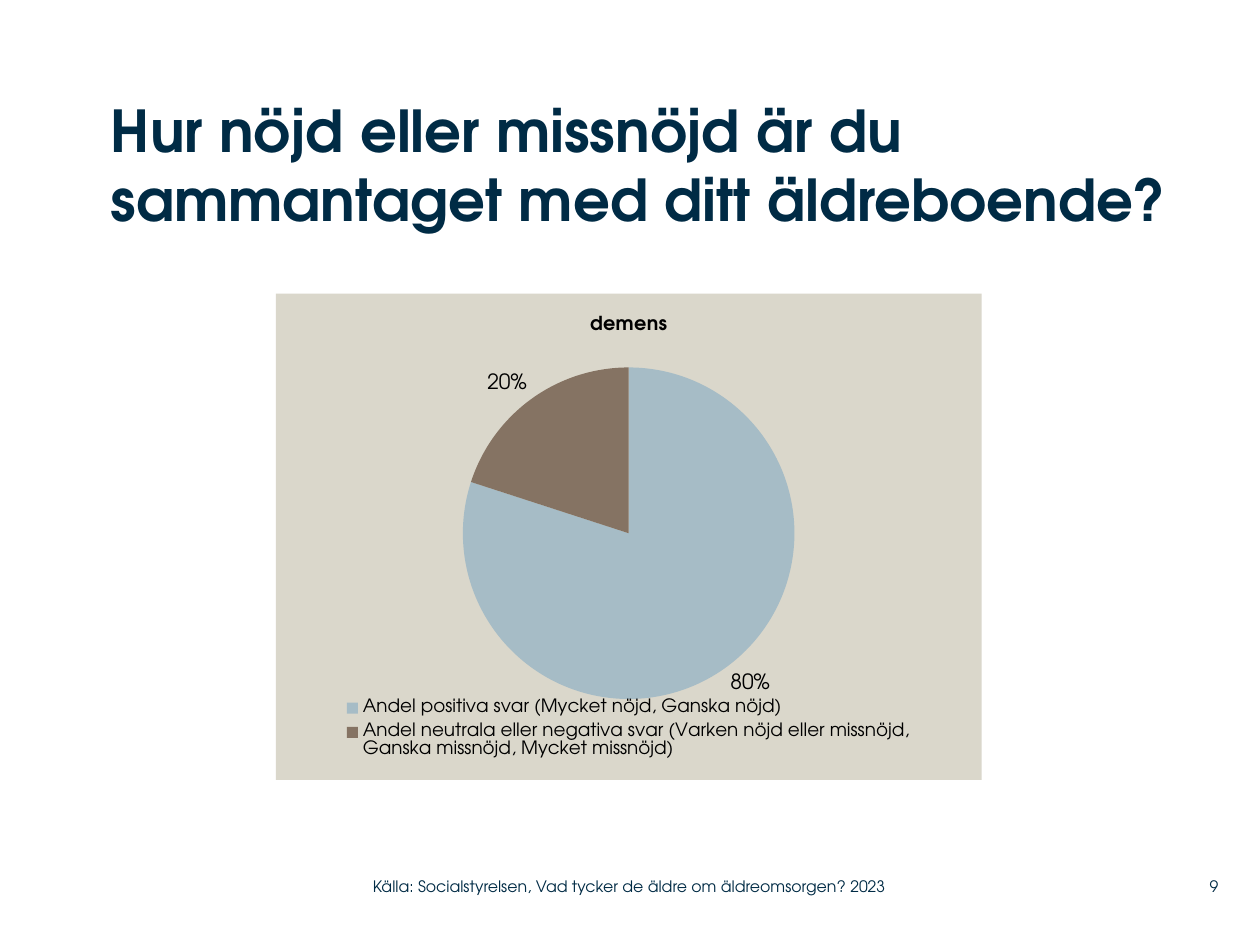
from lxml.etree import SubElement
from pptx import Presentation
from pptx.chart.data import CategoryChartData
from pptx.dml.color import RGBColor
from pptx.enum.chart import XL_CHART_TYPE, XL_LABEL_POSITION, XL_LEGEND_POSITION
from pptx.enum.text import MSO_ANCHOR, PP_ALIGN
from pptx.oxml import parse_xml
from pptx.oxml.ns import nsdecls, qn
from pptx.util import Inches, Pt

FONT = "TeX Gyre Adventor"
NAVY, BLACK, SAND = "002B45", "000000", "DAD7CB"

TEXTS = [
    ("Hur nöjd eller missnöjd är du sammantaget med ditt äldreboende?",
     (0.88, 0.75, 8.83, 1.42), 33, True, PP_ALIGN.LEFT, MSO_ANCHOR.TOP),
    ("Källa: Socialstyrelsen, Vad tycker de äldre om äldreomsorgen? 2023",
     (2.96, 6.89, 4.43, 0.29), 9, False, PP_ALIGN.LEFT, MSO_ANCHOR.MIDDLE),
    ("9", (9.2, 6.89, 0.47, 0.29), 9, False, PP_ALIGN.RIGHT, MSO_ANCHOR.MIDDLE),
]
CHART_TITLE = "demens"
CHART_AREA = (2.19, 2.33, 5.6, 3.86)
SLICES = [
    ("Andel positiva svar (Mycket nöjd, Ganska nöjd)", 80, "A6BCC6"),
    ("Andel neutrala eller negativa svar (Varken nöjd eller missnöjd, "
     "Ganska missnöjd, Mycket missnöjd)", 20, "857363"),
]
PIE_SHARES = (0.265, 0.152, 0.47, 0.682)
LEGEND_SHARES = (0.09, 0.82, 0.82, 0.15)


def color(value):
    return RGBColor.from_string(value)


def style(font, size, value, bold=False):
    font.name, font.size, font.bold = FONT, Pt(size), bold
    font.color.rgb = color(value)


def add_text(page, text, area, size, bold, align, anchor):
    box = page.shapes.add_textbox(*map(Inches, area))
    frame = box.text_frame
    frame.word_wrap = True
    frame.vertical_anchor = anchor
    frame.margin_left = frame.margin_right = frame.margin_top = frame.margin_bottom = 0
    frame.text = text
    paragraph = frame.paragraphs[0]
    paragraph.alignment = align
    style(paragraph.runs[0].font, size, NAVY, bold)
    return paragraph


def manual_layout(parent, shares, inner=False):
    for old in parent.findall(qn("c:layout")):
        parent.remove(old)
    layout = parent.makeelement(qn("c:layout"))
    manual = SubElement(layout, qn("c:manualLayout"))
    settings = [("layoutTarget", "inner")] if inner else []
    settings += [("xMode", "edge"), ("yMode", "edge"), *zip("xywh", shares)]
    for tag, value in settings:
        SubElement(manual, qn(f"c:{tag}")).set("val", str(value))
    position = parent.find(qn("c:legendPos"))
    if position is None:
        parent.insert(0, layout)
    else:
        position.addnext(layout)


def add_pie(page):
    names, values, fills = zip(*SLICES)
    data = CategoryChartData(number_format="0")
    data.categories = names
    data.add_series(CHART_TITLE, values)
    chart = page.shapes.add_chart(
        XL_CHART_TYPE.PIE, *map(Inches, CHART_AREA), data).chart
    style(chart.font, 18, BLACK)
    chart.has_title = True
    chart.chart_title.text_frame.text = CHART_TITLE
    style(chart.chart_title.text_frame.paragraphs[0].runs[0].font, 11, BLACK, True)
    chart.chart_title.include_in_layout = False

    chart.has_legend = True
    chart.legend.position = XL_LEGEND_POSITION.BOTTOM
    chart.legend.include_in_layout = False
    style(chart.legend.font, 10.5, BLACK)

    plot = chart.plots[0]
    plot.vary_by_categories = True
    series = plot.series[0]
    for index, value in enumerate(fills):
        fill = series.points[index].format.fill
        fill.solid()
        fill.fore_color.rgb = color(value)
    labels = series.data_labels
    labels.show_percentage = True
    labels.show_value = False
    labels.number_format = "0%"
    labels.number_format_is_linked = False
    labels.position = XL_LABEL_POSITION.OUTSIDE_END
    style(labels.font, 12, BLACK)

    space = chart.element
    manual_layout(space.chart.plotArea, PIE_SHARES, inner=True)
    manual_layout(space.chart.find(qn("c:legend")), LEGEND_SHARES)
    space.chart.addnext(parse_xml(
        f'<c:spPr {nsdecls("c", "a")}><a:solidFill><a:srgbClr val="{SAND}"/>'
        "</a:solidFill><a:ln><a:noFill/></a:ln></c:spPr>"))


def main():
    deck = Presentation()
    deck.slide_width, deck.slide_height = Inches(10), Inches(7.5)
    page = deck.slides.add_slide(deck.slide_layouts[6])
    for item in TEXTS:
        add_text(page, *item)
    add_pie(page)
    deck.save("out.pptx")


if __name__ == "__main__":
    main()
